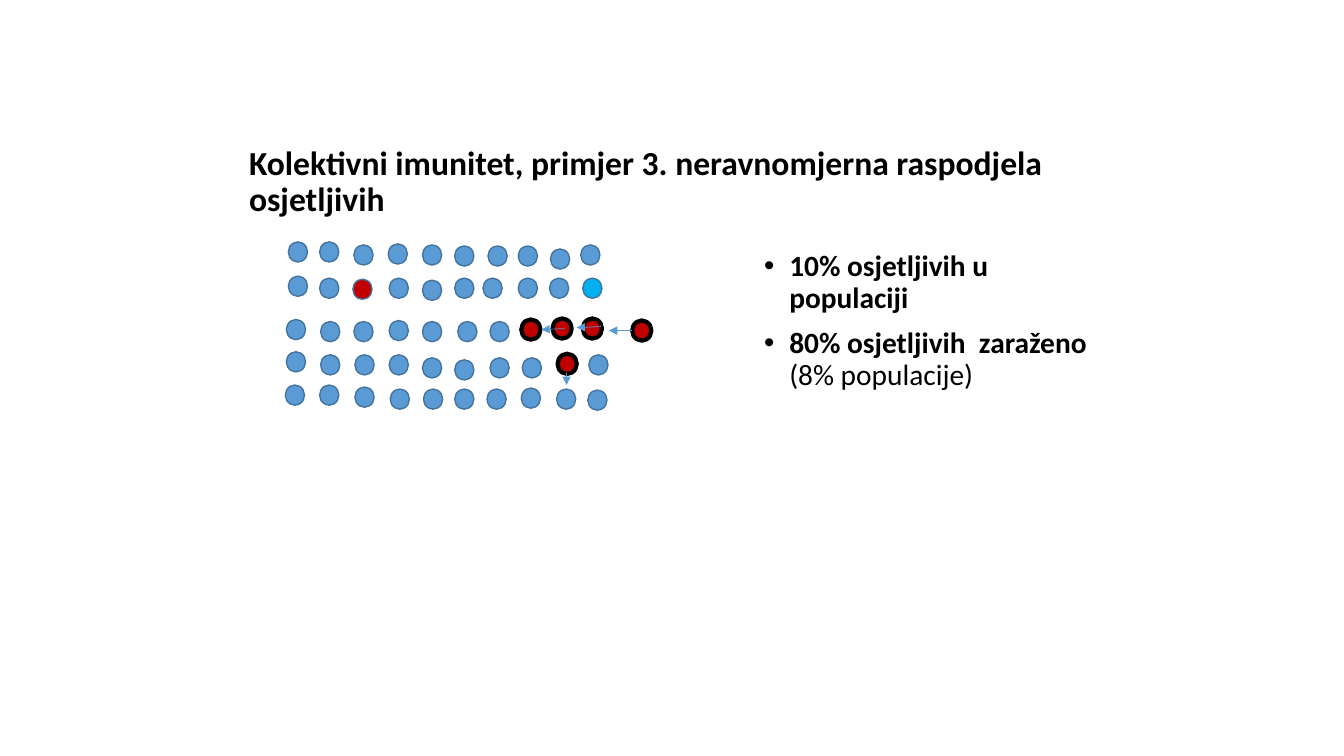
from lxml import etree
from pptx import Presentation
from pptx.dml.color import RGBColor
from pptx.enum.shapes import MSO_CONNECTOR as CONN, MSO_SHAPE as SHAPE
from pptx.enum.text import MSO_ANCHOR as ANCHOR, MSO_AUTO_SIZE as AUTO, PP_ALIGN as ALIGN
from pptx.oxml.ns import qn
from pptx.util import Inches, Pt

FONT = "Calibri"
COLORS = {
    "text": "000000",
    "immune": "5B9BD5",
    "susceptible": "00B0F0",
    "infected": "C00000",
    "outline": "43739E",
    "ring": "000000",
    "arrow": "5B9BD5",
}

# Dot kinds: fill, outline colour, outline width in points
KINDS = {
    "immune": ("immune", "outline", 1),
    "susceptible": ("susceptible", "outline", 1),
    "red": ("infected", "outline", 1),
    "spreading": ("infected", "ring", 3),
}
DOT_W, DOT_H = 0.19, 0.2

# Left and top of each person, row by row
PEOPLE = [
    [(2.86, 2.4), (3.17, 2.4), (3.51, 2.43), (3.85, 2.42), (4.19, 2.43),
     (4.51, 2.44), (4.84, 2.44), (5.14, 2.44), (5.46, 2.47), (5.76, 2.43)],
    [(2.86, 2.74), (3.17, 2.76), (3.5, 2.77), (3.86, 2.76), (4.19, 2.78),
     (4.51, 2.76), (4.79, 2.76), (5.14, 2.76), (5.45, 2.76), (5.78, 2.76)],
    [(2.84, 3.17), (3.18, 3.19), (3.51, 3.19), (3.86, 3.18), (4.19, 3.19),
     (4.54, 3.19), (4.86, 3.19), (5.17, 3.17), (5.48, 3.16), (5.78, 3.16),
     (6.27, 3.18)],
    [(2.84, 3.49), (3.18, 3.52), (3.52, 3.52), (3.86, 3.52), (4.19, 3.55),
     (4.51, 3.57), (4.86, 3.55), (5.18, 3.55), (5.53, 3.51), (5.84, 3.52)],
    [(2.83, 3.82), (3.17, 3.82), (3.52, 3.84), (3.87, 3.86), (4.2, 3.86),
     (4.51, 3.86), (4.83, 3.86), (5.17, 3.85), (5.52, 3.86), (5.83, 3.87)],
]
# People who are not immune, by (row, column)
SPECIAL = {
    (1, 2): "red",
    (1, 9): "susceptible",
    (2, 7): "spreading",
    (2, 8): "spreading",
    (2, 9): "spreading",
    (2, 10): "spreading",
    (3, 8): "spreading",
}
# Path of the infection: from x, y to x, y
ARROWS = [
    (6.27, 3.28, 6.04, 3.28),
    (5.96, 3.24, 5.72, 3.25),
    (5.6, 3.26, 5.37, 3.27),
    (5.62, 3.7, 5.62, 3.82),
]
# Bullets as (text, bold) runs
BULLETS = [
    [("10% osjetljivih u populaciji", True)],
    [("80% osjetljivih  zaraženo", True), (" (8% populacije)", False)],
]


def rgb(name):
    return RGBColor.from_string(COLORS[name])


def format_paragraph(p, size):
    p.alignment = ALIGN.LEFT
    p.line_spacing = 0.9
    p.font.name = FONT
    p.font.size = Pt(size)
    p.font.color.rgb = rgb("text")


def set_title(s, text):
    title = s.shapes.title
    title.left, title.top = Inches(2.37), Inches(1.27)
    title.width, title.height = Inches(8.62), Inches(1.09)
    tf = title.text_frame
    tf.text = text
    tf.word_wrap = True
    tf.auto_size = AUTO.NONE
    tf.vertical_anchor = ANCHOR.MIDDLE
    p = tf.paragraphs[0]
    format_paragraph(p, 24)
    p.font.bold = True


def add_dot(s, x, y, kind):
    fill, line, width = KINDS[kind]
    sp = s.shapes.add_shape(SHAPE.OVAL, Inches(x), Inches(y), Inches(DOT_W), Inches(DOT_H))
    sp.shadow.inherit = False
    sp.fill.solid()
    sp.fill.fore_color.rgb = rgb(fill)
    sp.line.color.rgb = rgb(line)
    sp.line.width = Pt(width)


def add_arrow(s, x1, y1, x2, y2):
    cn = s.shapes.add_connector(CONN.STRAIGHT, Inches(x1), Inches(y1), Inches(x2), Inches(y2))
    cn.line.color.rgb = rgb("arrow")
    cn.line.width = Pt(0.5)
    etree.SubElement(cn.line._get_or_add_ln(), qn("a:tailEnd"), type="triangle")
    etree.SubElement(cn._element.spPr, qn("a:effectLst"))


def add_bullets(s, bullets):
    tf = s.shapes.add_textbox(Inches(7.48), Inches(2.44), Inches(3.5), Inches(3.57)).text_frame
    tf.word_wrap = True
    for i, runs in enumerate(bullets):
        p = tf.add_paragraph() if i else tf.paragraphs[0]
        format_paragraph(p, 21)
        p.space_before = Pt(10)
        for text, bold in runs:
            r = p.add_run()
            r.text = text
            r.font.bold = bold
        # Hanging bullet, placed ahead of the default run properties
        pPr = p._p.get_or_add_pPr()
        pPr.set("marL", str(Inches(0.25)))
        pPr.set("indent", str(-Inches(0.25)))
        defaults = pPr.find(qn("a:defRPr"))
        for tag, attrs in (("a:buFont", {"typeface": "Arial"}), ("a:buChar", {"char": "•"})):
            defaults.addprevious(etree.Element(qn(tag), attrs))


def main():
    prs = Presentation()
    prs.slide_width, prs.slide_height = Inches(13.33), Inches(7.5)
    s = prs.slides.add_slide(prs.slide_layouts[5])

    set_title(s, "Kolektivni imunitet, primjer 3. neravnomjerna raspodjela osjetljivih")

    # Population and spread of the infection
    for row, places in enumerate(PEOPLE):
        for col, (x, y) in enumerate(places):
            add_dot(s, x, y, SPECIAL.get((row, col), "immune"))
    for ends in ARROWS:
        add_arrow(s, *ends)

    # Conclusions
    add_bullets(s, BULLETS)
    prs.save("out.pptx")


if __name__ == "__main__":
    main()
